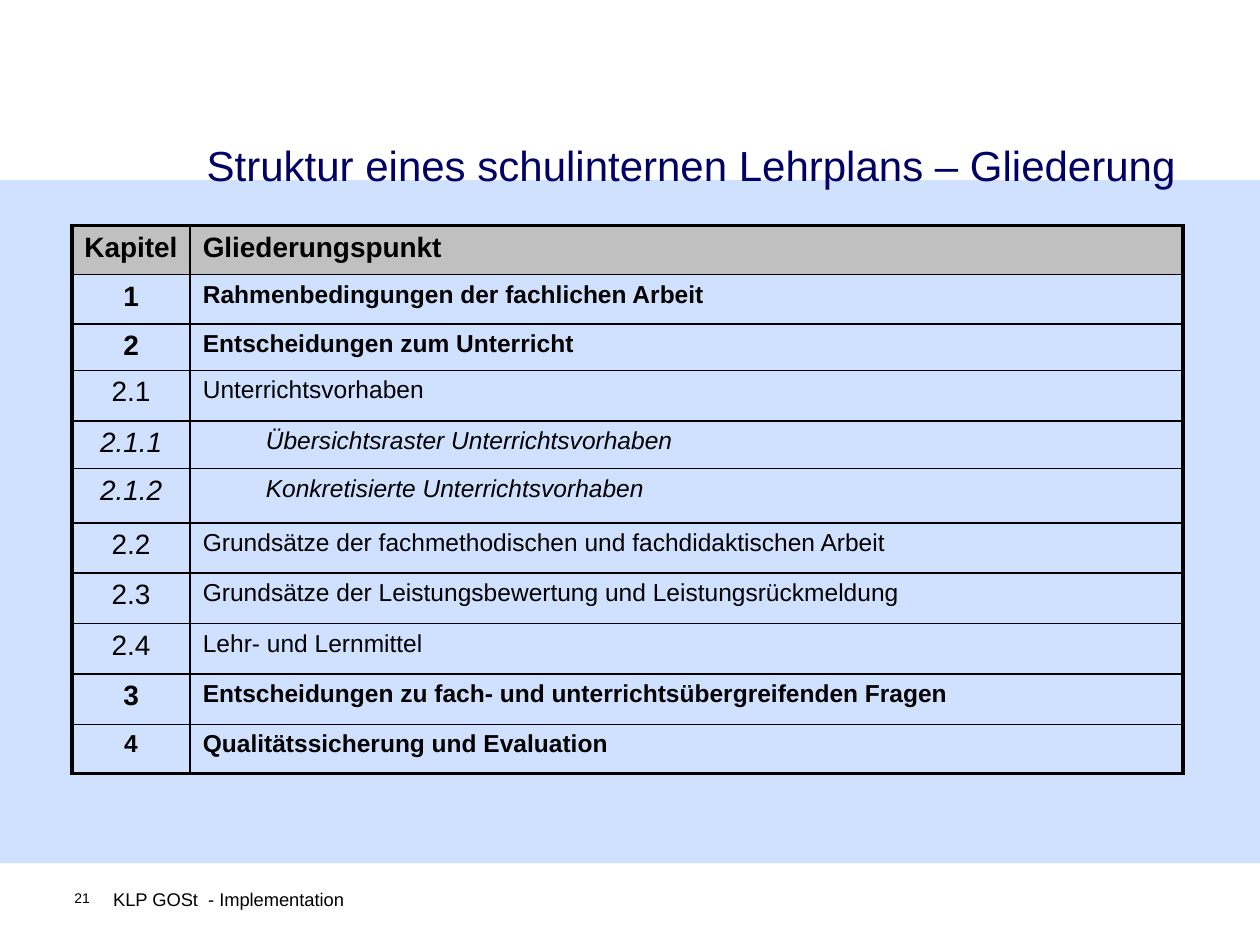
from pptx import Presentation
from pptx.dml.color import RGBColor
from pptx.enum.shapes import MSO_SHAPE
from pptx.enum.text import PP_ALIGN
from pptx.oxml.ns import qn
from pptx.util import Inches, Pt
from lxml import etree

RECTANGLE = MSO_SHAPE.RECTANGLE
LEFT, CENTER, RIGHT = PP_ALIGN.LEFT, PP_ALIGN.CENTER, PP_ALIGN.RIGHT
THIN, THICK = 1, 2.25

COLUMN_WIDTHS = [0.94, 7.88]
# Chapter, heading, row height, style
CHAPTERS = [
    ("1", "Rahmenbedingungen der fachlichen Arbeit", 0.39, "bold"),
    ("2", "Entscheidungen zum Unterricht", 0.37, "bold"),
    ("2.1", "Unterrichtsvorhaben", 0.4, "plain"),
    ("2.1.1", "Übersichtsraster Unterrichtsvorhaben", 0.38, "italic"),
    ("2.1.2", "Konkretisierte Unterrichtsvorhaben", 0.43, "italic"),
    ("2.2", "Grundsätze der fachmethodischen und fachdidaktischen Arbeit", 0.4, "plain"),
    ("2.3", "Grundsätze der Leistungsbewertung und Leistungsrückmeldung", 0.4, "plain"),
    ("2.4", "Lehr- und Lernmittel", 0.4, "plain"),
    ("3", "Entscheidungen zu fach- und unterrichtsübergreifenden Fragen", 0.4, "bold"),
    ("4", "Qualitätssicherung und Evaluation", 0.39, "bold"),
]


def color(value):
    return RGBColor.from_string(value)


def write(frame, text, size=14, fill="000000", bold=False, italic=False,
          align=LEFT, indent=0):
    para = frame.paragraphs[0]
    para.alignment = align
    if indent:
        properties = para._p.get_or_add_pPr()
        properties.set("marL", str(Inches(indent)))
        properties.set("indent", "0")
        para.level = 1
    span = para.add_run()
    span.text = text
    font = span.font
    font.name, font.size, font.bold, font.italic = "Arial", Pt(size), bold, italic
    font.color.rgb = color(fill)


class SlideBuilder:
    ink = "000000"

    def __init__(self, page):
        self.page = page

    def band(self, left, top, width, height, fill, opacity):
        box = self.page.shapes.add_shape(
            RECTANGLE, Inches(left), Inches(top), Inches(width), Inches(height))
        box.shadow.inherit = False
        box.line.fill.background()
        box.fill.solid()
        box.fill.fore_color.rgb = color(fill)
        tint = box._element.spPr.find(qn("a:solidFill"))[0]
        etree.SubElement(tint, qn("a:alpha"), val=str(opacity * 1000))

    def text(self, left, top, width, height, text, insets=(0, 0, 0, 0), **style):
        box = self.page.shapes.add_textbox(
            Inches(left), Inches(top), Inches(width), Inches(height))
        frame = box.text_frame
        frame.word_wrap = True
        (frame.margin_left, frame.margin_top,
         frame.margin_right, frame.margin_bottom) = map(Inches, insets)
        write(frame, text, **style)

    def table(self, left, top, widths, heights):
        grid = self.page.shapes.add_table(
            len(heights), len(widths), Inches(left), Inches(top),
            Inches(sum(widths)), Inches(sum(heights))).table
        grid.first_row = grid.horz_banding = False
        for column, width in zip(grid.columns, widths):
            column.width = Inches(width)
        for row, height in zip(grid.rows, heights):
            row.height = Inches(height)
        last_row, last_column = len(heights) - 1, len(widths) - 1
        for r in range(len(heights)):
            for c in range(len(widths)):
                outer = {"lnL": c == 0, "lnR": c == last_column,
                         "lnT": r == 0, "lnB": r == last_row}
                self.borders(grid.cell(r, c), outer)
        return grid

    def borders(self, cell, outer):
        properties = cell._tc.get_or_add_tcPr()
        for side, is_outer in outer.items():
            line = etree.SubElement(properties, qn("a:" + side),
                                    w=str(Pt(THICK if is_outer else THIN)))
            solid = etree.SubElement(line, qn("a:solidFill"))
            etree.SubElement(solid, qn("a:srgbClr"), val=self.ink)

    def cell(self, cell, text, background=None, **style):
        if background:
            cell.fill.solid()
            cell.fill.fore_color.rgb = color(background)
        else:
            cell.fill.background()
        cell.margin_left = cell.margin_right = Inches(0.1)
        cell.margin_top = cell.margin_bottom = Inches(0.05)
        write(cell.text_frame, text, **style)


def main():
    deck = Presentation()
    deck.slide_width, deck.slide_height = Inches(10), Inches(7.5)
    builder = SlideBuilder(deck.slides.add_slide(deck.slide_layouts[6]))

    # Background band and title
    builder.band(0, 1.43, 10, 5.42, "6699FF", 30)
    builder.text(0.51, 1.07, 8.82, 0.54,
                 "Struktur eines schulinternen Lehrplans – Gliederung",
                 insets=(0, 0.04, 0, 0), size=24, fill="000066", align=RIGHT)

    # Outline table
    heights = [0.39] + [height for _, _, height, _ in CHAPTERS]
    grid = builder.table(0.57, 1.79, COLUMN_WIDTHS, heights)
    for column, heading in enumerate(["Kapitel", "Gliederungspunkt"]):
        builder.cell(grid.cell(0, column), heading, "C0C0C0", size=16, bold=True)
    for row, (number, heading, _, style) in enumerate(CHAPTERS, 1):
        look = {"bold": style == "bold", "italic": style == "italic"}
        number_size = 14 if row == len(CHAPTERS) else 16
        builder.cell(grid.cell(row, 0), number, size=number_size, align=CENTER, **look)
        builder.cell(grid.cell(row, 1), heading,
                     indent=0.5 if style == "italic" else 0, **look)

    # Footer
    builder.text(0.59, 7.06, 0.32, 0.37, "21", size=8)
    builder.text(0.8, 7, 8.95, 0.28, "KLP GOSt  - Implementation",
                 insets=(0.1, 0.05, 0.1, 0.05), size=10.5)

    deck.save("out.pptx")


if __name__ == "__main__":
    main()
